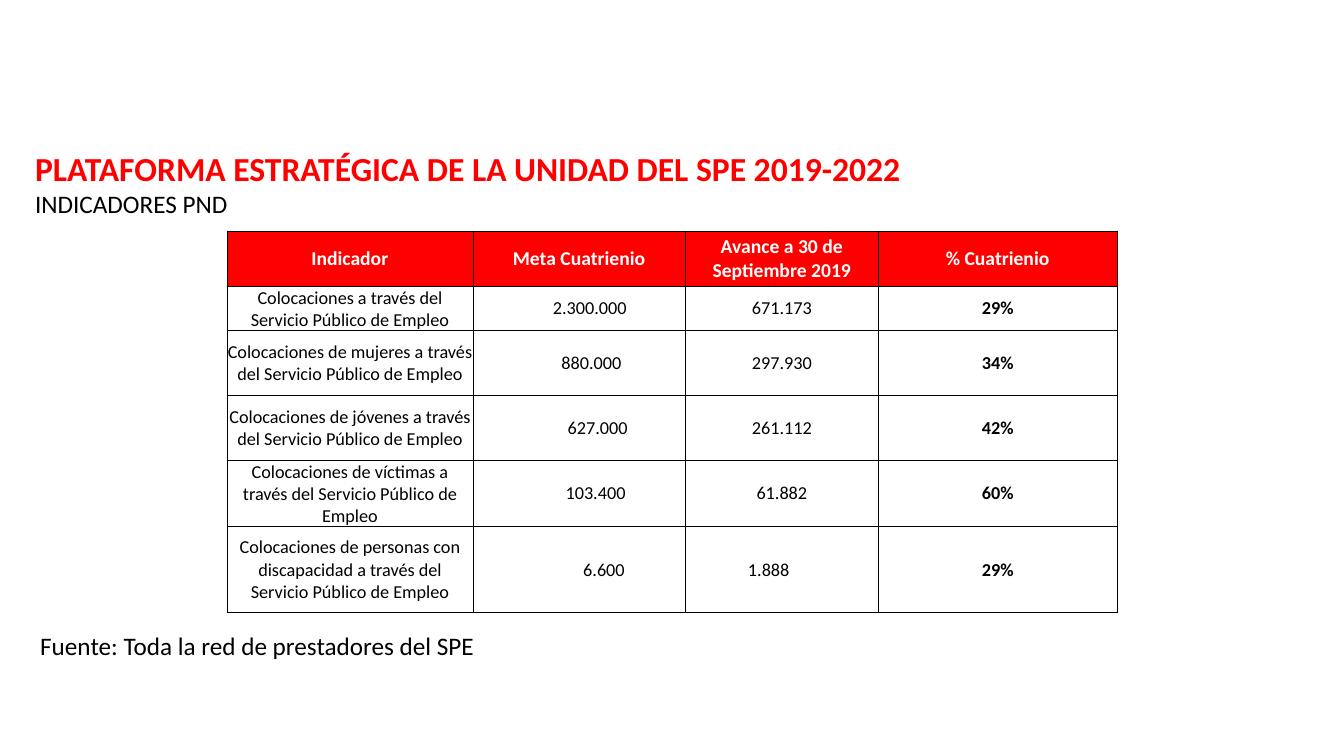
from lxml import etree
from pptx import Presentation, util as u
from pptx.dml.color import RGBColor
from pptx.enum import text
from pptx.oxml.ns import qn

COLORS = {"red": "FF0000", "white": "FFFFFF", "black": "000000"}
CENTER, LEFT = text.PP_ALIGN.CENTER, text.PP_ALIGN.LEFT

presentation = Presentation()
presentation.slide_width, presentation.slide_height = u.Inches(13.33), u.Inches(7.5)
slide = presentation.slides.add_slide(presentation.slide_layouts[6])
unit = presentation.slide_height / 90  # square grid, 160 columns by 90 rows


def grid(*counts):
    return [round(count * unit) for count in counts]


def style(paragraph, size, color, bold=False, align=LEFT):
    paragraph.alignment = align
    paragraph.font.name = "Calibri"
    paragraph.font.size = u.Pt(size)
    paragraph.font.bold = bold
    paragraph.font.color.rgb = RGBColor.from_string(COLORS[color])


# Heading and source note: box, then lines of (wording, size, color, bold)
text_boxes = [
    ((3, 17, 111.25, 9.7), [
        ("PLATAFORMA ESTRATÉGICA DE LA UNIDAD DEL SPE 2019-2022", 24, "red", True),
        ("INDICADORES PND", 18, "black", False)]),
    ((3.6, 74.5, 55.1, 4.8), [
        ("Fuente: Toda la red de prestadores del SPE", 18, "black", False)]),
]
for box, lines in text_boxes:
    frame = slide.shapes.add_textbox(*grid(*box)).text_frame
    frame.word_wrap = False
    frame.auto_size = text.MSO_AUTO_SIZE.SHAPE_TO_FIT_TEXT
    frame.text = "\n".join(line[0] for line in lines)
    for paragraph, (_, size, color, bold) in zip(frame.paragraphs, lines):
        style(paragraph, size, color, bold)

# Indicator table
rows = [
    ("Indicador", "Meta Cuatrienio", "Avance a 30 de Septiembre 2019", "% Cuatrienio"),
    ("Colocaciones a través del Servicio Público de Empleo", "2.300.000", "671.173", "29%"),
    ("Colocaciones de mujeres a través del Servicio Público de Empleo",
     "880.000", "297.930", "34%"),
    ("Colocaciones de jóvenes a través del Servicio Público de Empleo",
     "627.000", "261.112", "42%"),
    ("Colocaciones de víctimas a través del Servicio Público de Empleo",
     "103.400", "61.882", "60%"),
    ("Colocaciones de personas con discapacidad a través del Servicio Público de Empleo",
     "6.600", "1.888", "29%"),
]
column_widths = grid(29.28, 25.3, 22.95, 28.45)
row_heights = grid(6.55, 5.2, 7.7, 7.7, 7.7, 10.25)
# Left margins, in grid units, of the figures set off from the middle
offsets = {(1, 1): 2.6, (2, 1): 3, (3, 1): 4.5, (4, 1): 4, (5, 1): 6, (5, 2): 7.45}

table = slide.shapes.add_table(
    len(rows), len(column_widths), *grid(27, 27.5),
    sum(column_widths), sum(row_heights)).table
table.horz_banding = False
for column, width in zip(table.columns, column_widths):
    column.width = width
for row, height in zip(table.rows, row_heights):
    row.height = height

for r, values in enumerate(rows):
    for c, value in enumerate(values):
        cell = table.cell(r, c)
        cell.text = value
        cell.vertical_anchor = text.MSO_ANCHOR.MIDDLE
        cell.margin_left, cell.margin_right, cell.margin_top, cell.margin_bottom = grid(
            offsets.get((r, c), 0.1), 0.1, 0.1, 0)

        properties = cell._tc.get_or_add_tcPr()
        for side in ("a:lnL", "a:lnR", "a:lnT", "a:lnB"):
            border = etree.SubElement(properties, qn(side), w=str(u.Pt(0.5)))
            fill = etree.SubElement(border, qn("a:solidFill"))
            etree.SubElement(fill, qn("a:srgbClr"), val=COLORS["black"])

        paragraph = cell.text_frame.paragraphs[0]
        if r == 0:
            cell.fill.solid()
            cell.fill.fore_color.rgb = RGBColor.from_string(COLORS["red"])
            style(paragraph, 14, "white", True, CENTER)
        else:
            cell.fill.background()
            style(paragraph, 13, "black", c == 3, LEFT if (r, c) == (5, 2) else CENTER)

presentation.save("out.pptx")
